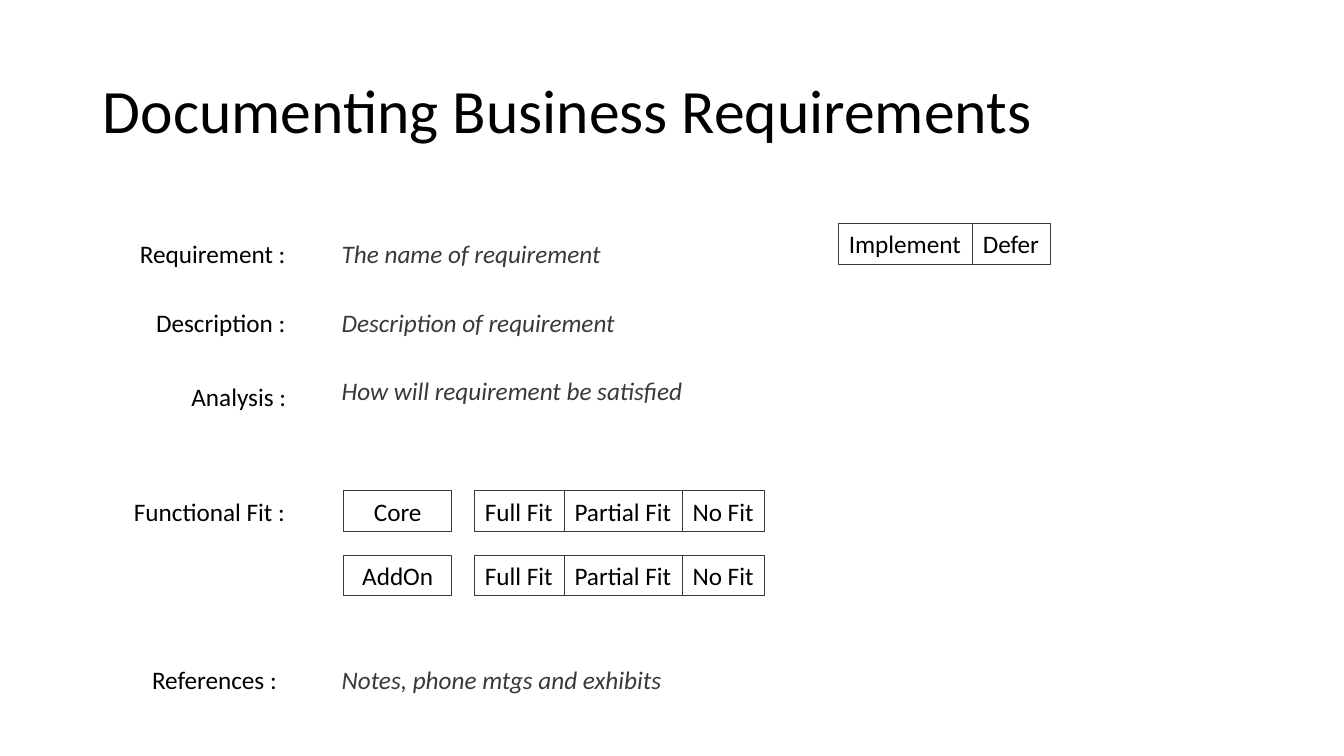
from dataclasses import dataclass

from pptx import Presentation
from pptx.dml.color import RGBColor
from pptx.enum.shapes import MSO_SHAPE as Shape
from pptx.enum.text import MSO_ANCHOR as Anchor, MSO_AUTO_SIZE as AutoSize, PP_ALIGN as Align
from pptx.slide import Slide
from pptx.text.text import Font
from pptx.util import Pt

EMU_PER_PX = 9144
BLACK = "000000"
GREY = "3B3838"
ROW_HEIGHT = 40
LABEL_RIGHT = 295
ANSWER_LEFT, ANSWER_WIDTH = 329, 428
SOURCE_LEFT, SOURCE_WIDTH = 341, 107


@dataclass
class Field:
    label: str
    top: int
    label_width: int
    answer: str = ""
    answer_top: int = 0
    label_right: int = LABEL_RIGHT


@dataclass
class Option:
    text: str
    width: int


FIELDS = [
    Field("Requirement :", 232, 166, "The name of requirement", 232),
    Field("Description :", 300, 150, "Description of requirement", 300),
    Field("Analysis :", 373, 115, "How will requirement be satisfied", 367),
    Field("Functional Fit :", 487, 172),
    Field("References :", 654, 146, "Notes, phone mtgs and exhibits", 654, 287),
]
FIT_OPTIONS = [Option("Full Fit", 89), Option("Partial Fit", 117), Option("No Fit", 81)]
DECISION_OPTIONS = [Option("Implement", 133), Option("Defer", 77)]
FIT_ROWS = {"Core": 487, "AddOn": 551}


def px(length: int) -> int:
    return length * EMU_PER_PX


def colour(value: str) -> RGBColor:
    return RGBColor.from_string(value)


def style_font(font: Font, size: int, hex_colour: str, italic: bool = False) -> None:
    font.name = "Calibri"
    font.size = Pt(size)
    font.italic = italic
    font.color.rgb = colour(hex_colour)


def add_title(slide: Slide, text: str) -> None:
    title = slide.shapes.title
    title.left, title.top, title.width, title.height = map(px, (92, 40, 1150, 145))
    frame = title.text_frame
    frame.text = text
    frame.auto_size = AutoSize.NONE
    frame.vertical_anchor = Anchor.MIDDLE
    para = frame.paragraphs[0]
    para.alignment = Align.LEFT
    para.line_spacing = 0.9
    style_font(para.runs[0].font, 44, BLACK)


def add_text(slide: Slide, text: str, left: int, top: int, width: int,
             answer: bool = False) -> None:
    box = slide.shapes.add_textbox(px(left), px(top), px(width), px(ROW_HEIGHT))
    frame = box.text_frame
    frame.text = text
    frame.word_wrap = answer
    frame.auto_size = AutoSize.SHAPE_TO_FIT_TEXT
    style_font(frame.paragraphs[0].runs[0].font, 18, GREY if answer else BLACK, answer)


def add_cell(slide: Slide, text: str, left: int, top: int, width: int,
             centred: bool = False) -> None:
    cell = slide.shapes.add_shape(
        Shape.RECTANGLE, px(left), px(top), px(width), px(ROW_HEIGHT))
    cell.shadow.inherit = False
    cell.fill.background()
    cell.line.color.rgb = colour(GREY)
    cell.line.width = Pt(0.75)
    frame = cell.text_frame
    frame.text = text
    frame.word_wrap = centred
    frame.auto_size = AutoSize.SHAPE_TO_FIT_TEXT
    frame.vertical_anchor = Anchor.MIDDLE if centred else Anchor.TOP
    para = frame.paragraphs[0]
    para.alignment = Align.CENTER if centred else Align.LEFT
    style_font(para.runs[0].font, 18, BLACK)


def add_options(slide: Slide, options: list[Option], left: int, top: int) -> None:
    for option in options:
        add_cell(slide, option.text, left, top, option.width)
        left += option.width


def main() -> None:
    deck = Presentation()
    deck.slide_width, deck.slide_height = px(1333), px(750)
    slide = deck.slides.add_slide(deck.slide_layouts.get_by_name("Title Only"))
    add_title(slide, "Documenting Business Requirements")
    for field in FIELDS:
        add_text(slide, field.label, field.label_right - field.label_width,
                 field.top, field.label_width)
        if field.answer:
            add_text(slide, field.answer, ANSWER_LEFT, field.answer_top,
                     ANSWER_WIDTH, answer=True)
    for source, top in FIT_ROWS.items():
        add_cell(slide, source, SOURCE_LEFT, top, SOURCE_WIDTH, centred=True)
        add_options(slide, FIT_OPTIONS, 471, top)
    add_options(slide, DECISION_OPTIONS, 832, 222)
    deck.save("out.pptx")


if __name__ == "__main__":
    main()
